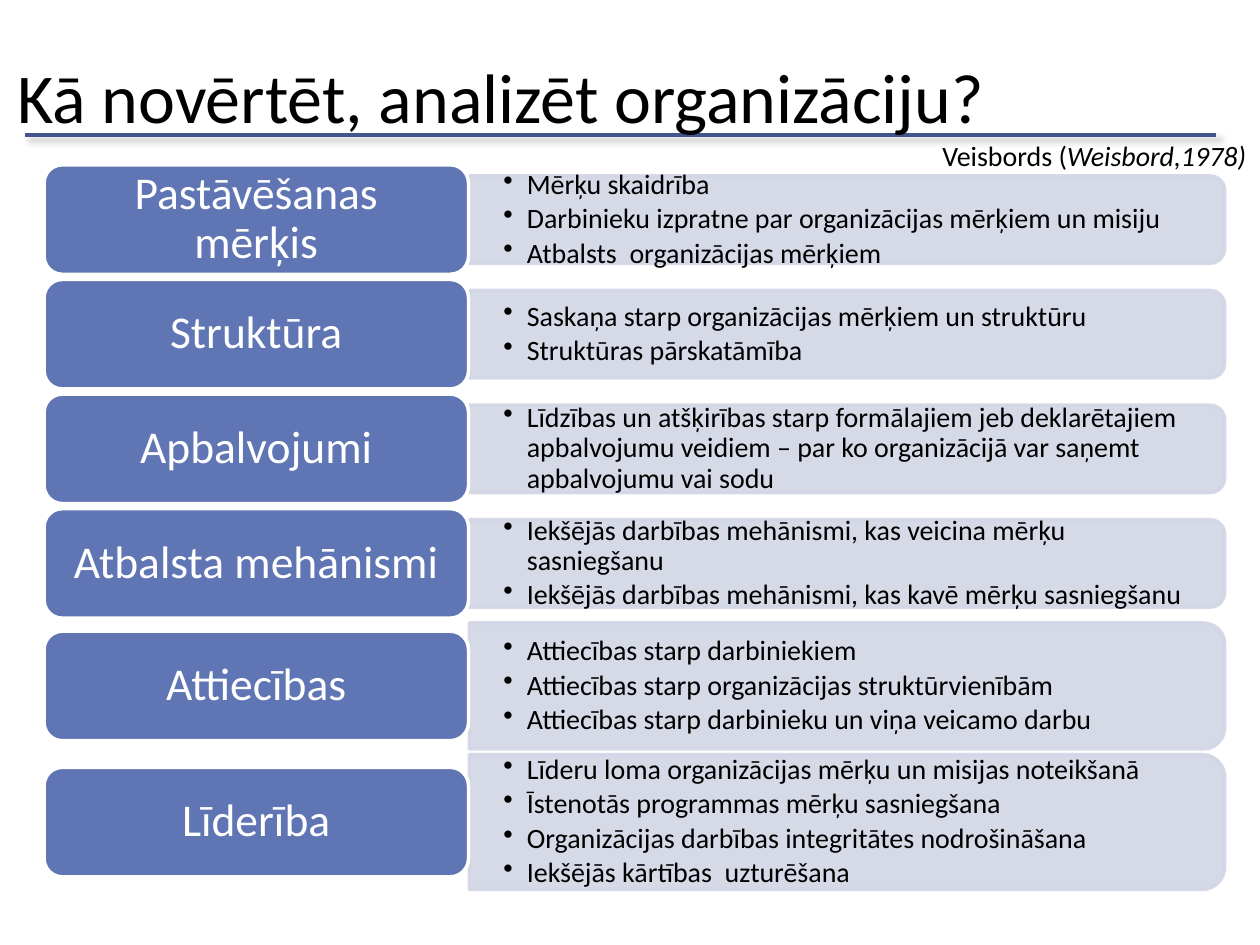
from lxml.etree import SubElement
from pptx import Presentation
from pptx.dml.color import RGBColor
from pptx.enum.shapes import MSO_CONNECTOR, MSO_SHAPE
from pptx.enum.text import MSO_ANCHOR, PP_ALIGN
from pptx.oxml.ns import qn
from pptx.util import Pt

BLACK = RGBColor(0x00, 0x00, 0x00)
WHITE = RGBColor(0xFF, 0xFF, 0xFF)
RULE_BLUE = RGBColor(0x42, 0x56, 0x8D)
LABEL_BLUE = RGBColor(0x60, 0x76, 0xB4)
PANEL_GREY = RGBColor(0xD2, 0xD6, 0xE5)

FONT = "Calibri"
LABEL_LEFT, LABEL_WIDTH, LABEL_HEIGHT = 25.2, 242.6, 62.6
PANEL_LEFT, PANEL_WIDTH = 268.2, 431.6
FIRST_CENTRE, ROW_STEP = 125.5, 65.5

ROWS = [
    ("Pastāvēšanas mērķis", FIRST_CENTRE, 50, [
        "Mērķu skaidrība",
        "Darbinieku izpratne par organizācijas mērķiem un misiju",
        "Atbalsts  organizācijas mērķiem"]),
    ("Struktūra", FIRST_CENTRE + ROW_STEP, 50, [
        "Saskaņa starp organizācijas mērķiem un struktūru",
        "Struktūras pārskatāmība"]),
    ("Apbalvojumi", FIRST_CENTRE + 2 * ROW_STEP, 50, [
        "Līdzības un atšķirības starp formālajiem jeb deklarētajiem apbalvojumu "
        "veidiem – par ko organizācijā var saņemt apbalvojumu vai sodu"]),
    ("Atbalsta mehānismi", FIRST_CENTRE + 3 * ROW_STEP, 50, [
        "Iekšējās darbības mehānismi, kas veicina mērķu sasniegšanu",
        "Iekšējās darbības mehānismi, kas kavē mērķu sasniegšanu"]),
    ("Attiecības", 392, 72, [
        "Attiecības starp darbiniekiem",
        "Attiecības starp organizācijas struktūrvienībām",
        "Attiecības starp darbinieku un viņa veicamo darbu"]),
    ("Līderība", 469.8, 77, [
        "Līderu loma organizācijas mērķu un misijas noteikšanā",
        "Īstenotās programmas mērķu sasniegšana",
        "Organizācijas darbības integritātes nodrošināšana",
        "Iekšējās kārtības  uzturēšana"]),
]


def add_run(paragraph, text, size, color, italic=False):
    """Append one formatted run to a paragraph."""
    run = paragraph.add_run()
    run.text = text
    run.font.name = FONT
    run.font.size = Pt(size)
    run.font.italic = italic
    run.font.color.rgb = color


def set_frame(shape, horizontal, vertical):
    """Wrap and centre a shape's text vertically, and return its frame."""
    frame = shape.text_frame
    frame.word_wrap = True
    frame.vertical_anchor = MSO_ANCHOR.MIDDLE
    frame.margin_left = frame.margin_right = Pt(horizontal)
    frame.margin_top = frame.margin_bottom = Pt(vertical)
    return frame


def add_text_box(slide, left, top, width, height, horizontal=7.2, vertical=3.6):
    """Add a text box and return its frame."""
    box = slide.shapes.add_textbox(Pt(left), Pt(top), Pt(width), Pt(height))
    return set_frame(box, horizontal, vertical)


def add_block(slide, preset, left, top, width, height, fill, line):
    """Add a filled preset shape with a two-point outline."""
    shape = slide.shapes.add_shape(preset, Pt(left), Pt(top), Pt(width), Pt(height))
    shape.shadow.inherit = False
    shape.fill.solid()
    shape.fill.fore_color.rgb = fill
    shape.line.color.rgb = line
    shape.line.width = Pt(2)
    return shape


def add_rule(slide):
    """Add the title rule with its soft shadow."""
    rule = slide.shapes.add_connector(
        MSO_CONNECTOR.STRAIGHT, Pt(14.4), Pt(77), Pt(694.8), Pt(77))
    rule.line.color.rgb = RULE_BLUE
    rule.line.width = Pt(2.25)
    effects = SubElement(rule._element.spPr, qn("a:effectLst"))
    shadow = SubElement(effects, qn("a:outerShdw"), blurRad=str(Pt(4)),
                        dist=str(Pt(3)), dir="2700000", rotWithShape="0")
    color = SubElement(shadow, qn("a:srgbClr"), val=str(BLACK))
    SubElement(color, qn("a:alpha"), val="40000")


def add_panel(slide, centre, height):
    """Add a grey panel with rounded right corners, turned a quarter."""
    left = PANEL_LEFT + (PANEL_WIDTH - height) / 2
    panel = add_block(slide, MSO_SHAPE.ROUND_2_SAME_RECTANGLE, left,
                      centre - PANEL_WIDTH / 2, height, PANEL_WIDTH,
                      PANEL_GREY, PANEL_GREY)
    panel.rotation = 90
    for color in panel._element.spPr.iter(qn("a:srgbClr")):
        SubElement(color, qn("a:alpha"), val="90000")


def add_bullets(slide, centre, height, items):
    """Add the bulleted text that lies on a panel."""
    frame = add_text_box(slide, PANEL_LEFT, centre - height / 2,
                         429, height, 19.4, 10)
    for index, item in enumerate(items):
        paragraph = frame.paragraphs[0] if index == 0 else frame.add_paragraph()
        paragraph.line_spacing = 0.9
        paragraph.space_after = Pt(2.4)
        properties = paragraph._p.get_or_add_pPr()
        properties.set("marL", str(Pt(13.5)))
        properties.set("indent", str(-Pt(13.5)))
        SubElement(properties, qn("a:buChar"), char="•")
        add_run(paragraph, item, 16, BLACK)


def add_label(slide, centre, text):
    """Add a blue label centred on its row."""
    label = add_block(slide, MSO_SHAPE.ROUNDED_RECTANGLE, LABEL_LEFT,
                      centre - LABEL_HEIGHT / 2, LABEL_WIDTH, LABEL_HEIGHT,
                      LABEL_BLUE, WHITE)
    paragraph = set_frame(label, 10.8, 6.5).paragraphs[0]
    paragraph.alignment = PP_ALIGN.CENTER
    paragraph.line_spacing = 0.9
    add_run(paragraph, text, 26, WHITE)


def main():
    """Build the slide and save it."""
    presentation = Presentation()
    presentation.slide_width, presentation.slide_height = Pt(720), Pt(540)
    slide = presentation.slides.add_slide(presentation.slide_layouts[6])

    add_rule(slide)
    source = add_text_box(slide, 462.2, 43.9, 260.6, 90).paragraphs[0]
    source.alignment = PP_ALIGN.RIGHT
    add_run(source, "Veisbords (", 16, BLACK)
    add_run(source, "Weisbord,1978) ", 16, BLACK, italic=True)
    title = add_text_box(slide, 2.9, 9.4, 657.4, 90).paragraphs[0]
    add_run(title, "Kā novērtēt, analizēt organizāciju?", 40, BLACK)

    for name, centre, height, items in ROWS:
        add_panel(slide, centre, height)
        add_bullets(slide, centre, height, items)
        add_label(slide, centre, name)

    presentation.save("out.pptx")


if __name__ == "__main__":
    main()
